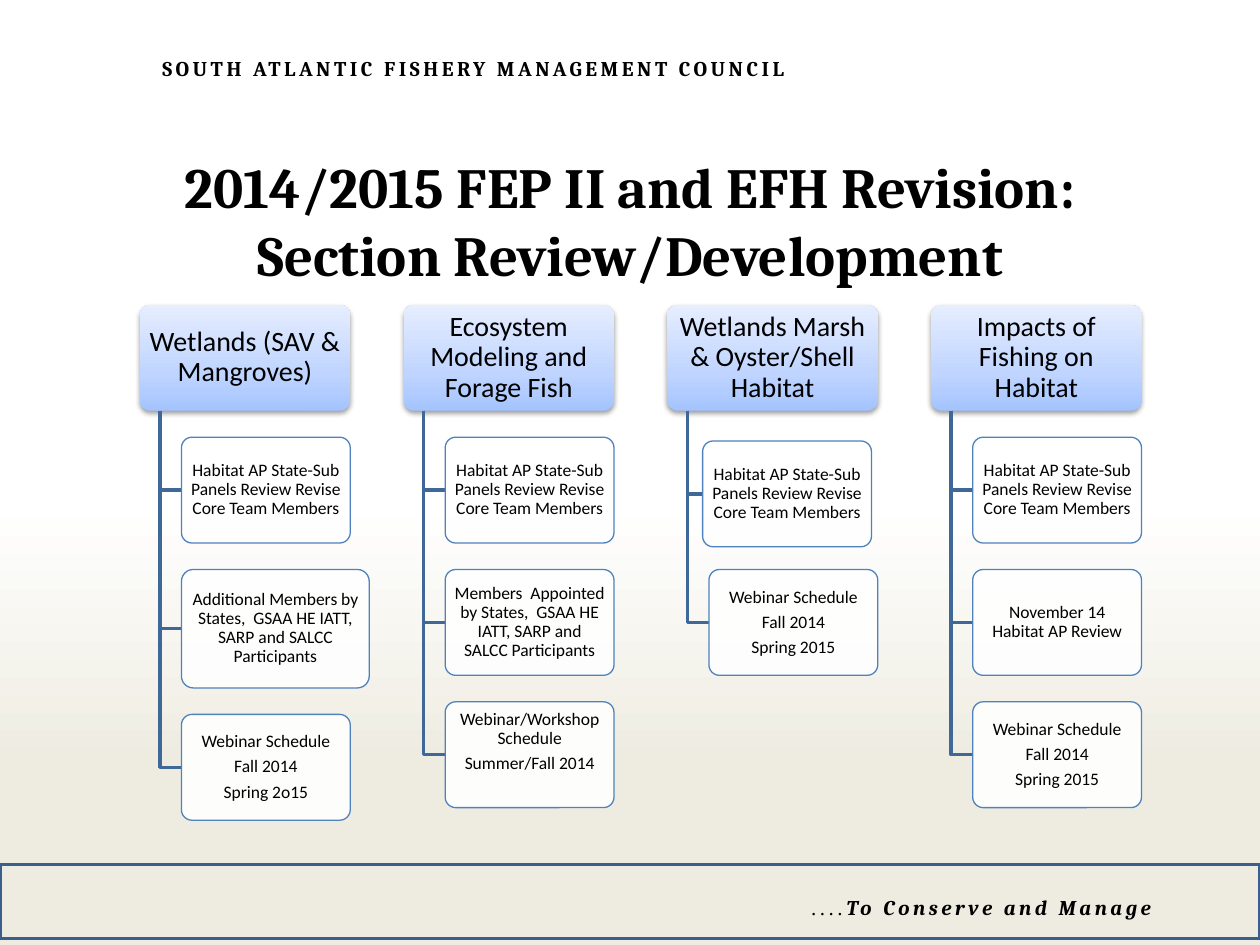
import dataclasses

import pptx
import pptx.dml.color
import pptx.enum.shapes
import pptx.enum.text
import pptx.oxml
import pptx.oxml.ns
import pptx.util
from pptx.util import Inches

MSO_SHAPE = pptx.enum.shapes.MSO_SHAPE
ANCHOR = pptx.enum.text.MSO_ANCHOR
ALIGN = pptx.enum.text.PP_ALIGN
qn = pptx.oxml.ns.qn

HEAD_W, HEAD_H = 1.67, 0.84
CARD_W, CARD_H = 1.34, 0.84
LEFT, TOP, GAP = 1.11, 2.42, 0.21
PITCH = (7.39 - LEFT) / 3
TRUNK_DX, CARD_DX = 0.16, 0.33


@dataclasses.dataclass
class Card:
    lines: list
    dx: float = 0
    dy: float = 0
    w: float = CARD_W
    h: float = CARD_H
    bottom_inset: float = 0.04


REVIEW = ["Habitat AP State-Sub Panels Review Revise Core Team Members"]
WEBINAR = ["Webinar Schedule", "Fall 2014", "Spring 2015"]
COLUMNS = [
    ("Wetlands (SAV & Mangroves)", [
        Card(REVIEW),
        Card(["Additional Members by States,  GSAA HE IATT, SARP and SALCC Participants"],
             w=1.49, h=0.94),
        Card(["Webinar Schedule", "Fall 2014", "Spring 2o15"]),
    ]),
    ("Ecosystem Modeling and Forage Fish", [
        Card(REVIEW),
        Card(["Members  Appointed by States,  GSAA HE IATT, SARP and SALCC Participants"]),
        Card(["Webinar/Workshop Schedule", "Summer/Fall 2014"], bottom_inset=0.24),
    ]),
    ("Wetlands Marsh & Oyster/Shell Habitat", [
        Card(REVIEW, dx=-0.05, dy=0.03),
        Card(WEBINAR),
    ]),
    ("Impacts of Fishing on Habitat", [
        Card(REVIEW),
        Card(["November 14 Habitat AP Review"]),
        Card(WEBINAR),
    ]),
]


def rgb(color):
    return pptx.dml.color.RGBColor.from_string(color)


def xml(tag, content="", **attrs):
    """Return an element of the drawing namespace."""
    text = "".join(f' {name}="{value}"' for name, value in attrs.items())
    return pptx.oxml.parse_xml(
        f'<a:{tag} {pptx.oxml.ns.nsdecls("a")}{text}>{content}</a:{tag}>')


def color_xml(color, alpha=100):
    return f'<a:srgbClr val="{color}"><a:alpha val="{alpha * 1000}"/></a:srgbClr>'


def set_gradient(fill, element, stops, angle):
    """Fill with (position, colour) stops; the angle runs clockwise."""
    fill.gradient()
    fill.gradient_angle = 360 - angle
    stop_list = element.find(".//" + qn("a:gsLst"))
    for old in list(stop_list):
        stop_list.remove(old)
    for pos, color in stops:
        stop_list.append(xml("gs", color_xml(color), pos=pos * 1000))


class Deck:
    font = "Calibri"
    serif = "Cambria"
    ink = "000000"
    branch_color = "3F6797"

    def __init__(self):
        self.prs = pptx.Presentation()
        self.prs.slide_width, self.prs.slide_height = Inches(10), Inches(7.5)
        self.s = self.prs.slides.add_slide(self.prs.slide_layouts[0])
        subtitle = self.s.placeholders[1]._element
        subtitle.getparent().remove(subtitle)
        set_gradient(self.s.background.fill, self.s._element,
                     [(53, "FFFFFF"), (81, "EEECE1")], 90)

    def style(self, r, size, font, bold=False, italic=False, spacing=0):
        r.font.size, r.font.name = pptx.util.Pt(size), font
        r.font.bold, r.font.italic = bold, italic
        r.font.color.rgb = rgb(self.ink)
        if spacing:
            r._r.get_or_add_rPr().set("spc", str(spacing * 100))

    def title(self, text, x, y, w, h):
        sp = self.s.shapes.title
        sp.left, sp.top, sp.width, sp.height = map(Inches, (x, y, w, h))
        tf = sp.text_frame
        tf.text = text
        tf.word_wrap = True
        tf.auto_size = pptx.enum.text.MSO_AUTO_SIZE.NONE
        tf.vertical_anchor = ANCHOR.MIDDLE
        tf.paragraphs[0].alignment = ALIGN.CENTER
        self.style(tf.paragraphs[0].runs[0], 32.4, self.serif, bold=True)

    def motto(self, parts, x, y, w, h):
        """Add one letter-spaced line of (text, font, bold, italic) parts."""
        tf = self.s.shapes.add_textbox(*map(Inches, (x, y, w, h))).text_frame
        tf.word_wrap = True
        for text, font, bold, italic in parts:
            r = tf.paragraphs[0].add_run()
            r.text = text
            self.style(r, 12, font, bold, italic, spacing=2)

    def outline(self, x, y, w, h):
        sp = self.s.shapes.add_shape(MSO_SHAPE.RECTANGLE, *map(Inches, (x, y, w, h)))
        sp.shadow.inherit = False
        sp.fill.background()
        sp.line.color.rgb = rgb("3A5F8C")
        sp.line.width = pptx.util.Pt(2)

    def rounded(self, lines, x, y, w, h, size, inset, bottom_inset):
        sp = self.s.shapes.add_shape(MSO_SHAPE.ROUNDED_RECTANGLE,
                                     *map(Inches, (x, y, w, h)))
        sp.adjustments[0] = 0.1
        sp.shadow.inherit = False
        tf = sp.text_frame
        tf.text = "\n".join(lines)
        tf.word_wrap = True
        tf.vertical_anchor = ANCHOR.MIDDLE
        tf.margin_left = tf.margin_right = Inches(inset)
        tf.margin_top, tf.margin_bottom = Inches(0.04), Inches(bottom_inset)
        for p in tf.paragraphs:
            p.alignment = ALIGN.CENTER
            p.line_spacing = 0.9
            p.space_after = pptx.util.Pt(size * 0.35)
            self.style(p.runs[0], size, self.font)
        return sp

    def header(self, text, x, y):
        sp = self.rounded([text], x, y, HEAD_W, HEAD_H, 16, 0.05, 0.04)
        set_gradient(sp.fill, sp._element,
                     [(0, "A4C4FF"), (35, "BFD4FF"), (100, "E6EEFF")], 270)
        sp.line.fill.background()
        effects = sp._element.spPr.find(qn("a:effectLst"))
        effects.append(xml("outerShdw", color_xml(self.ink, 38),
                           blurRad=pptx.util.Pt(3.1), dist=pptx.util.Pt(1.6),
                           dir=5400000, rotWithShape=0))

    def card(self, card, x, y):
        sp = self.rounded(card.lines, x, y, card.w, card.h, 10, 0.05, card.bottom_inset)
        sp.fill.solid()
        sp.fill.fore_color.rgb = rgb("FFFFFF")
        white = sp._element.spPr.find(qn("a:solidFill")).find(qn("a:srgbClr"))
        white.append(xml("alpha", val=90000))
        sp.line.color.rgb = rgb("4F81BD")
        sp.line.width = pptx.util.Pt(0.75)

    def branch(self, x, y, end_x, end_y):
        """Draw an elbow down from (x, y) and across to the end point."""
        builder = self.s.shapes.build_freeform(Inches(x), Inches(y))
        builder.add_line_segments([(Inches(x), Inches(end_y)),
                                   (Inches(end_x), Inches(end_y))], close=False)
        sp = builder.convert_to_shape()
        sp.shadow.inherit = False
        sp.fill.background()
        sp.line.color.rgb = rgb(self.branch_color)
        sp.line.width = pptx.util.Pt(2)

    def column(self, heading, cards, x):
        self.header(heading, x, TOP)
        bottom = TOP + HEAD_H
        y = bottom + GAP
        for card in cards:
            card_x, card_y = x + CARD_DX + card.dx, y + card.dy
            self.branch(x + TRUNK_DX, bottom, card_x, card_y + card.h / 2)
            self.card(card, card_x, card_y)
            y += card.h + GAP


def main():
    deck = Deck()
    deck.motto([("SOUTH ATLANTIC FISHERY MANAGEMENT COUNCIL", deck.serif, True, False)],
               1.19, 0.39, 8.8, 0.3)
    deck.motto([("....", "Times New Roman", False, False),
                ("To Conserve and Manage", deck.serif, True, True)],
               6.34, 7.05, 3.66, 0.3)
    deck.outline(0, 6.86, 10, 0.59)
    for i, (heading, cards) in enumerate(COLUMNS):
        deck.column(heading, cards, LEFT + i * PITCH)
    deck.title("2014/2015 FEP II and EFH Revision: Section Review/Development",
               0.75, 1.08, 8.5, 1.33)
    deck.prs.save("out.pptx")


if __name__ == "__main__":
    main()
